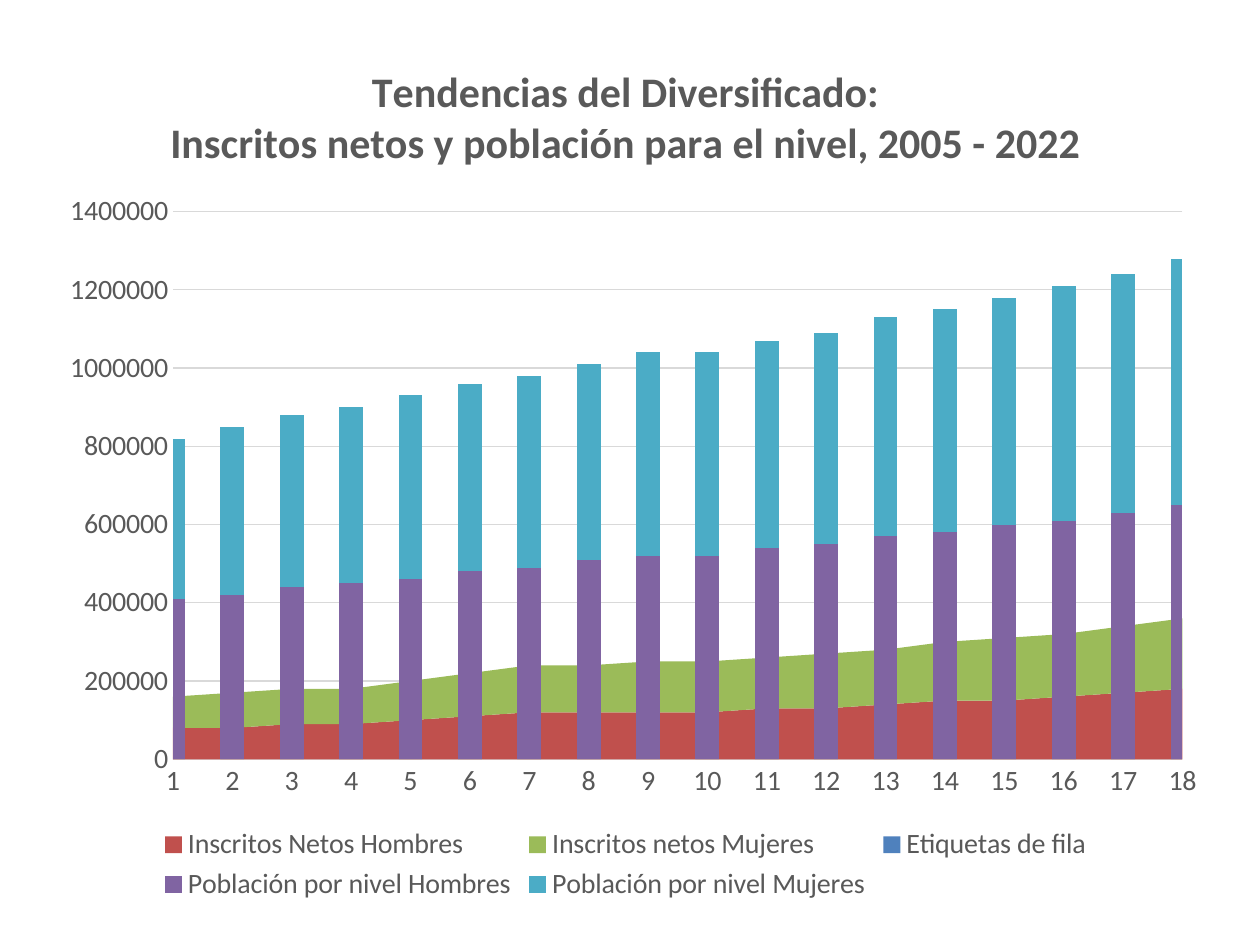
from pptx import Presentation
from pptx.chart.data import CategoryChartData
from pptx.dml.color import RGBColor
from pptx.enum.chart import XL_CHART_TYPE as ChartType
from pptx.enum.chart import XL_LEGEND_POSITION as LegendPosition
from pptx.enum.chart import XL_TICK_MARK as TickMark
from pptx.oxml import parse_xml
from pptx.oxml.ns import nsdecls, qn
from pptx.util import Inches, Pt

COLORS = {
    "text": "595959", "grid": "D9D9D9",
    "enrolled_men": "C0504D", "enrolled_women": "9BBB59", "row_labels": "4F81BD",
    "population_men": "8064A2", "population_women": "4BACC6",
}
FONT = "Calibri"
YEARS = 18
AREA_COUNT = 2  # the leading series are drawn as stacked areas
UNIT = 10000

# Name, colour key and values in tens of thousands
SERIES = [
    ("Inscritos Netos Hombres", "enrolled_men",
     [8, 8, 9, 9, 10, 11, 12, 12, 12, 12, 13, 13, 14, 15, 15, 16, 17, 18]),
    ("Inscritos netos Mujeres", "enrolled_women",
     [8, 9, 9, 9, 10, 11, 12, 12, 13, 13, 13, 14, 14, 15, 16, 16, 17, 18]),
    ("Etiquetas de fila", "row_labels", [0] * YEARS),
    ("Población por nivel Hombres", "population_men",
     [41, 42, 44, 45, 46, 48, 49, 51, 52, 52, 54, 55, 57, 58, 60, 61, 63, 65]),
    ("Población por nivel Mujeres", "population_women",
     [41, 43, 44, 45, 47, 48, 49, 50, 52, 52, 53, 54, 56, 57, 58, 60, 61, 63]),
]
TITLE = ["Tendencias del Diversificado:",
         "Inscritos netos y población para el nivel, 2005 - 2022"]


def rgb(key):
    return RGBColor.from_string(COLORS[key])


def format_font(font, size=16, bold=False, color="text"):
    font.name, font.size, font.bold = FONT, Pt(size), bold
    font.color.rgb = rgb(color)


def write_text(text_frame, lines, **font_format):
    for index, line in enumerate(lines):
        paragraph = text_frame.paragraphs[0] if index == 0 else text_frame.add_paragraph()
        run = paragraph.add_run()
        run.text = line
        format_font(run.font, **font_format)


def format_line(line, color="grid", width=0.75):
    line.color.rgb = rgb(color)
    line.width = Pt(width)


def add_chart(slide):
    data = CategoryChartData()
    data.categories = [str(number) for number in range(1, YEARS + 1)]
    for name, _, values in SERIES:
        data.add_series(name, [value * UNIT for value in values])
    frame = slide.shapes.add_chart(
        ChartType.COLUMN_STACKED, Inches(0.36), Inches(0.3), Inches(9.21), Inches(6.9), data)
    return frame.chart


def format_series(plot):
    plot.gap_width, plot.overlap = 150, 100
    plot.vary_by_categories = False
    for series, (_, color, _) in zip(plot.series, SERIES):
        series.format.fill.solid()
        series.format.fill.fore_color.rgb = rgb(color)


def format_axes(chart):
    for axis in (chart.category_axis, chart.value_axis):
        axis.major_tick_mark = axis.minor_tick_mark = TickMark.NONE
        format_font(axis.tick_labels.font)
    format_line(chart.category_axis.format.line)
    value_axis = chart.value_axis
    value_axis.minimum_scale, value_axis.maximum_scale = 0, 1400000
    value_axis.major_unit = 200000
    value_axis.format.line.fill.background()
    format_line(value_axis.major_gridlines.format.line)
    value_axis.tick_labels.number_format = "General"
    value_axis.tick_labels.number_format_is_linked = False


def move_series_to_areas(chart):
    """Put the leading series in a stacked area plot behind the columns."""
    bars = chart.plots[0].series[0]._element.getparent()
    areas = parse_xml(
        f'<c:areaChart {nsdecls("c")}><c:grouping val="stacked"/>'
        '<c:varyColors val="0"/></c:areaChart>')
    for element in bars.findall(qn("c:ser"))[:AREA_COUNT]:
        for flag in element.findall(qn("c:invertIfNegative")):
            element.remove(flag)
        areas.append(element)
    for axis_id in bars.findall(qn("c:axId")):
        areas.append(parse_xml(f'<c:axId {nsdecls("c")} val="{axis_id.get("val")}"/>'))
    bars.addprevious(areas)


def place_plot(chart, x, y, width, height):
    """Fix the inner plot area, as shares of the chart's size."""
    plot_area = chart._chartSpace.chart.plotArea
    for layout in plot_area.findall(qn("c:layout")):
        plot_area.remove(layout)
    sizes = "".join(f'<c:{tag} val="{value}"/>' for tag, value in
                    zip("xywh", (x, y, width, height)))
    plot_area.insert(0, parse_xml(
        f'<c:layout {nsdecls("c")}><c:manualLayout><c:layoutTarget val="inner"/>'
        f'<c:xMode val="edge"/><c:yMode val="edge"/>{sizes}</c:manualLayout></c:layout>'))


def main():
    presentation = Presentation()
    presentation.slide_width, presentation.slide_height = Inches(10), Inches(7.5)
    slide = presentation.slides.add_slide(presentation.slide_layouts[6])

    # Chart with its title and legend
    chart = add_chart(slide)
    chart.font.name, chart.font.size = FONT, Pt(16)
    chart.has_title = True
    write_text(chart.chart_title.text_frame, TITLE, size=24, bold=True)
    chart.chart_title.include_in_layout = False
    chart.has_legend = True
    chart.legend.position = LegendPosition.BOTTOM
    chart.legend.include_in_layout = False
    format_font(chart.legend.font)

    # Plots and axes
    format_series(chart.plots[0])
    format_axes(chart)
    move_series_to_areas(chart)
    place_plot(chart, 0.11, 0.2, 0.87, 0.63)

    presentation.save("out.pptx")


if __name__ == "__main__":
    main()
